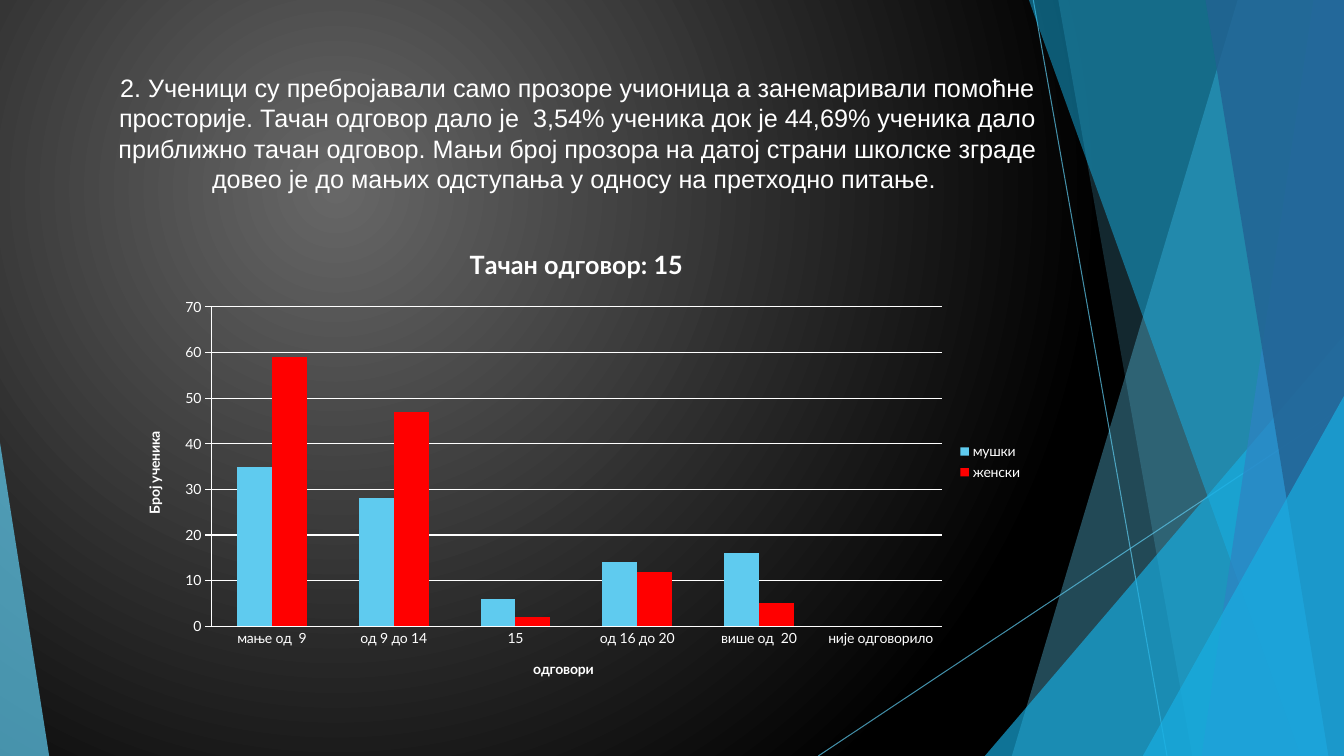
from lxml.etree import SubElement
from pptx import Presentation
from pptx.chart.data import CategoryChartData
from pptx.dml.color import RGBColor
from pptx.enum.chart import XL_CHART_TYPE, XL_LEGEND_POSITION, XL_TICK_MARK
from pptx.enum.shapes import MSO_CONNECTOR, MSO_SHAPE
from pptx.enum.text import MSO_ANCHOR, PP_ALIGN
from pptx.oxml.ns import qn
from pptx.util import Cm, Pt

WHITE = RGBColor(0xFF, 0xFF, 0xFF)
BLACK = RGBColor(0x00, 0x00, 0x00)
GRAY = RGBColor(0x67, 0x67, 0x67)
RED = RGBColor(0xFF, 0x00, 0x00)
SKY = RGBColor(0x5F, 0xCB, 0xEF)
CYAN = RGBColor(0x17, 0xB0, 0xE4)
BLUE = RGBColor(0x2E, 0x83, 0xC3)
NAVY = RGBColor(0x22, 0x62, 0x92)

WIDTH, HEIGHT = 33.87, 19.05

TITLE = (
    "2. Ученици су пребројавали само прозоре учионица а занемаривали помоћне "
    "просторије. Тачан одговор дало је  3,54% ученика док је 44,69% ученика дало "
    "приближно тачан одговор. Мањи број прозора на датој страни школске зграде "
    "довео је до мањих одступања у односу на претходно питање. "
)
ANSWERS = ["мање од  9", "од 9 до 14", "15", "од 16 до 20", "више од  20", "није одговорило"]
PUPILS = [
    ("мушки", SKY, [35, 28, 6, 14, 16, None]),
    ("женски", RED, [59, 47, 2, 12, 5, None]),
]


def write(text_frame, text, font="Lato", size=10, bold=False, color=WHITE, align=PP_ALIGN.CENTER):
    paragraph = text_frame.paragraphs[0]
    paragraph.alignment = align
    run = paragraph.add_run()
    run.text = text
    run.font.name = font
    run.font.size = Pt(size)
    run.font.bold = bold
    run.font.color.rgb = color


def set_opacity(shape, percent):
    color = shape._element.spPr.find(".//" + qn("a:srgbClr"))
    SubElement(color, qn("a:alpha"), val=str(percent * 1000))


class FacetSlide:
    def __init__(self, presentation):
        self.slide = presentation.slides.add_slide(presentation.slide_layouts[5])
        self.shapes = self.slide.shapes

    def background(self, center, edge):
        fill = self.slide.background.fill
        fill.gradient()
        for stop, color, position in zip(fill.gradient_stops, (center, edge), (0, 1)):
            stop.color.rgb = color
            stop.position = position
        gradient = self.slide.element.find(".//" + qn("a:gradFill"))
        gradient.remove(gradient.find(qn("a:lin")))
        circle = SubElement(gradient, qn("a:path"), path="circle")
        SubElement(circle, qn("a:fillToRect"), l="50000", t="50000", r="100000", b="100000")

    def line(self, *ends):
        connector = self.shapes.add_connector(MSO_CONNECTOR.STRAIGHT, *map(Cm, ends))
        connector.line.color.rgb = SKY
        connector.line.width = Pt(0.75)
        set_opacity(connector, 70)
        SubElement(connector._element.spPr, qn("a:effectLst"))

    def paint(self, shape, color, opacity):
        shape.shadow.inherit = False
        shape.fill.solid()
        shape.fill.fore_color.rgb = color
        set_opacity(shape, opacity)
        shape.line.fill.background()

    def band(self, top_x, bottom_x, color, opacity):
        """Fill from a slanted left edge to the right side of the slide."""
        builder = self.shapes.build_freeform(Cm(top_x), 0)
        corners = [(WIDTH, 0), (WIDTH, HEIGHT), (bottom_x, HEIGHT)]
        builder.add_line_segments([(Cm(x), Cm(y)) for x, y in corners])
        self.paint(builder.convert_to_shape(), color, opacity)

    def corner(self, width, height, color, opacity, right=True):
        """Right triangle standing in a bottom corner of the slide."""
        left = WIDTH - width if right else 0
        shape = self.shapes.add_shape(
            MSO_SHAPE.ISOSCELES_TRIANGLE, Cm(left), Cm(HEIGHT - height), Cm(width), Cm(height))
        shape.adjustments[0] = 1 if right else 0
        self.paint(shape, color, opacity)

    def title(self, text, left, top, width, height):
        title = self.shapes.title
        title.left, title.top, title.width, title.height = map(Cm, (left, top, width, height))
        title.text_frame.word_wrap = True
        title.text_frame.vertical_anchor = MSO_ANCHOR.TOP
        write(title.text_frame, text, font="Arial", size=18)
        self.shapes._spTree.append(title._element)

    def axis(self, axis, name, tick):
        write(axis.axis_title.text_frame, name, bold=True)
        axis.major_tick_mark = tick
        axis.minor_tick_mark = XL_TICK_MARK.NONE
        axis.format.line.color.rgb = WHITE
        axis.format.line.width = Pt(0.75)

    def column_chart(self, name, left, top, width, height):
        data = CategoryChartData()
        data.categories = ANSWERS
        for label, _, values in PUPILS:
            data.add_series(label, values)
        chart = self.shapes.add_chart(
            XL_CHART_TYPE.COLUMN_CLUSTERED, *map(Cm, (left, top, width, height)), data).chart
        chart.font.name = "Lato"
        chart.font.size = Pt(10)
        chart.font.color.rgb = WHITE
        write(chart.chart_title.text_frame, name, size=18, bold=True)
        chart.chart_title.include_in_layout = False
        chart.has_legend = True
        chart.legend.position = XL_LEGEND_POSITION.RIGHT
        chart.legend.include_in_layout = False

        self.axis(chart.category_axis, "одговори", XL_TICK_MARK.NONE)
        self.axis(chart.value_axis, "Број ученика", XL_TICK_MARK.OUTSIDE)
        chart.value_axis.minimum_scale = 0
        chart.value_axis.maximum_scale = 70
        chart.value_axis.major_unit = 10
        chart.value_axis.has_major_gridlines = True
        gridline = chart.value_axis.major_gridlines.format.line
        gridline.color.rgb = WHITE
        gridline.width = Pt(0.75)

        plot = chart.plots[0]
        plot.gap_width = 150
        plot.overlap = 0
        plot.vary_by_categories = False
        for series, (_, color, _) in zip(plot.series, PUPILS):
            series.format.fill.solid()
            series.format.fill.fore_color.rgb = color
            series.invert_if_negative = False
        self.place_plot(chart, x=0.1, y=0.17, w=0.8, h=0.68)

    def place_plot(self, chart, **fractions):
        plot_area = chart._chartSpace.find(".//" + qn("c:plotArea"))
        layout = plot_area.find(qn("c:layout"))
        if layout is None:
            layout = SubElement(plot_area, qn("c:layout"))
            plot_area.insert(0, layout)
        manual = SubElement(layout, qn("c:manualLayout"))
        SubElement(manual, qn("c:layoutTarget"), val="inner")
        for side in "xy":
            SubElement(manual, qn(f"c:{side}Mode"), val="edge")
        for side, fraction in fractions.items():
            SubElement(manual, qn(f"c:{side}"), val=str(fraction))


def main():
    presentation = Presentation()
    presentation.slide_width = Cm(WIDTH)
    presentation.slide_height = Cm(HEIGHT)

    page = FacetSlide(presentation)
    page.background(GRAY, BLACK)
    page.line(26.04, 0, 29.41, HEIGHT)
    page.line(WIDTH, 10.24, 20.62, HEIGHT)
    page.band(31.19, 25.5, SKY, 36)
    page.band(26.67, 30.05, SKY, 20)
    page.corner(9.05, 10.59, CYAN, 66)
    page.band(25.93, 32.79, CYAN, 50)
    page.band(33.1, 30.28, BLUE, 70)
    page.band(30.38, 33.48, NAVY, 80)
    page.corner(5.07, 9.07, CYAN, 66)
    page.corner(1.24, 7.9, SKY, 70, right=False)
    page.title(TITLE, 1.88, 1.7, 25.35, 3.66)
    page.column_chart("Тачан одговор: 15", 3.02, 5.72, 23.01, 11.84)

    presentation.save("out.pptx")


if __name__ == "__main__":
    main()
